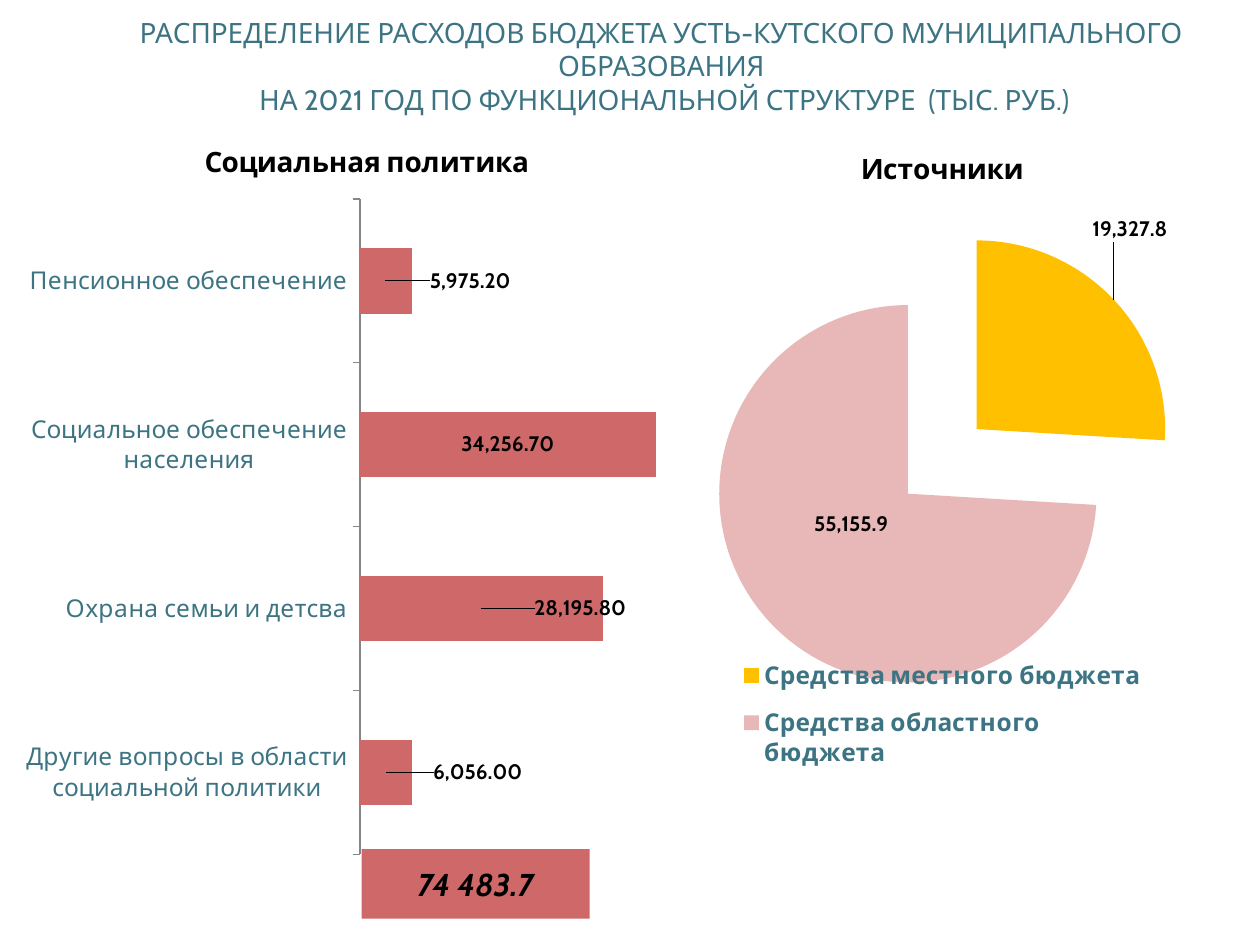
from lxml import etree
from pptx import Presentation
from pptx import util as u
from pptx.chart import data as cd
from pptx.dml.color import RGBColor
from pptx.enum import chart as ch, shapes, text
from pptx.oxml.ns import qn

FONT = "Cabin"
HUES = {"teal": "3C7483", "red": "CF6868", "gold": "FFC000",
        "pink": "E8B7B7", "ink": "000000", "axis": "868686"}


def rgb(name):
    return RGBColor.from_string(HUES[name])


def layout(x, y, w=None, h=None, inner=False):
    """Manual layout: a place when w and h are given, else a shift."""
    root = etree.Element(qn("c:layout"))
    man = etree.SubElement(root, qn("c:manualLayout"))
    items = [("x", x), ("y", y)]
    if w:
        edges = [("xMode", "edge"), ("yMode", "edge")]
        items = edges + items + [("w", w), ("h", h)]
    if inner:
        items.insert(0, ("layoutTarget", "inner"))
    for tag, val in items:
        etree.SubElement(man, qn("c:" + tag)).set("val", str(val))
    return root


class Deck:
    def __init__(self, wide, high):
        self.prs = Presentation()
        self.prs.slide_width, self.prs.slide_height = u.Cm(wide), u.Cm(high)
        self.slide = self.prs.slides.add_slide(self.prs.slide_layouts[6])

    def style(self, font, size, hue="ink", bold=False, slant=False):
        font.name, font.size = FONT, u.Pt(size)
        font.bold, font.italic = bold, slant
        font.color.rgb = rgb(hue)

    def fill_text(self, shape, words, size, hue, **kw):
        frame = shape.text_frame
        frame.word_wrap = True
        frame.vertical_anchor = text.MSO_ANCHOR.MIDDLE
        frame.text = words
        for par in frame.paragraphs:
            par.alignment = text.PP_ALIGN.CENTER
            for run in par.runs:
                self.style(run.font, size, hue, **kw)

    def label(self, box, words, size, hue):
        shape = self.slide.shapes.add_textbox(*map(u.Cm, box))
        self.fill_text(shape, words, size, hue)

    def block(self, box, words, size, fill):
        shape = self.slide.shapes.add_shape(
            shapes.MSO_SHAPE.RECTANGLE, *map(u.Cm, box))
        shape.shadow.inherit = False
        shape.fill.solid()
        shape.fill.fore_color.rgb = rgb(fill)
        shape.line.fill.background()
        self.fill_text(shape, words, size, "ink", bold=True, slant=True)

    def chart(self, kind, box, title, rows, hues, plot, fmt, shifts):
        data = cd.CategoryChartData()
        data.categories = [name for name, _ in rows]
        data.add_series(title, [val for _, val in rows])
        chart = self.slide.shapes.add_chart(
            kind, *map(u.Cm, box), data).chart
        self.style(chart.font, 18)
        chart.has_legend = False

        # Title and plot area
        chart.has_title = True
        frame = chart.chart_title.text_frame
        frame.text = title
        self.style(frame.paragraphs[0].runs[0].font, 16, bold=True)
        area = chart.plots[0]
        area.vary_by_categories = False
        node = chart.element.find(".//" + qn("c:plotArea"))
        for old in node.findall(qn("c:layout")):
            node.remove(old)
        node.insert(0, layout(*plot, inner=True))

        # Points and value labels
        series = area.series[0]
        for num, hue in enumerate(hues):
            fill = series.points[num].format.fill
            fill.solid()
            fill.fore_color.rgb = rgb(hue)
        tags = series.data_labels
        tags.show_value = True
        tags.number_format, tags.number_format_is_linked = fmt, False
        tags.position = ch.XL_LABEL_POSITION.CENTER
        self.style(tags.font, 12, bold=True)
        for num in shifts:
            tag = series.points[num].data_label
            self.style(tag.font, 12, bold=True)
            tag.position = ch.XL_LABEL_POSITION.CENTER
        for node in chart.element.findall(".//" + qn("c:dLbl")):
            idx = node.find(qn("c:idx"))
            form = etree.Element(qn("c:numFmt"))
            form.set("formatCode", fmt)
            form.set("sourceLinked", "0")
            idx.addnext(form)
            idx.addnext(layout(*shifts[int(idx.get("val"))]))
        return chart

    def bars(self, *args):
        chart = self.chart(ch.XL_CHART_TYPE.BAR_STACKED, *args)
        chart.plots[0].gap_width, chart.plots[0].overlap = 150, 100
        cats, vals = chart.category_axis, chart.value_axis
        cats.major_tick_mark = ch.XL_TICK_MARK.OUTSIDE
        cats.format.line.color.rgb = rgb("axis")
        self.style(cats.tick_labels.font, 14, "teal")
        vals.has_major_gridlines = vals.visible = False
        vals.minimum_scale, vals.maximum_scale = 0, 40000

    def pie(self, *args, burst, key):
        chart = self.chart(ch.XL_CHART_TYPE.PIE, *args)
        series = chart.element.find(".//" + qn("c:ser"))
        part = etree.Element(qn("c:explosion"))
        part.set("val", str(burst))
        series.find(qn("c:dPt")).addprevious(part)
        tags = series.find(qn("c:dLbls"))
        for old in tags.findall(qn("c:showLeaderLines")):
            tags.remove(old)
        etree.SubElement(tags, qn("c:showLeaderLines")).set("val", "1")

        # Legend over the foot of the pie
        chart.has_legend = True
        legend = chart.legend
        legend.position = ch.XL_LEGEND_POSITION.BOTTOM
        legend.include_in_layout = False
        self.style(legend.font, 14, "teal", bold=True)
        node = chart.element.find(".//" + qn("c:legend"))
        for old in node.findall(qn("c:layout")):
            node.remove(old)
        node.find(qn("c:legendPos")).addnext(layout(*key))


def main():
    deck = Deck(25.4, 19.05)

    # Heading
    deck.label((1.27, 0.13, 24.13, 2.39),
               "РАСПРЕДЕЛЕНИЕ РАСХОДОВ БЮДЖЕТА УСТЬ-КУТСКОГО "
               "МУНИЦИПАЛЬНОГО ОБРАЗОВАНИЯ\v НА 2021 ГОД ПО "
               "ФУНКЦИОНАЛЬНОЙ СТРУКТУРЕ  (ТЫС. РУБ.)", 16, "teal")

    # Spending by purpose
    costs = [("Другие вопросы в области социальной политики", 6056),
             ("Охрана семьи и детсва", 28195.8),
             ("Социальное обеспечение населения", 34256.7),
             ("Пенсионное обеспечение", 5975.2)]
    deck.bars((0.3, 2.34, 14.2, 15.19), "Социальная политика", costs,
              ["red"] * len(costs), (0.49, 0.11, 0.49, 0.87), "#,##0.00",
              {0: (0.13, 0), 1: (0.14, 0), 3: (0.12, 0)})

    # Sources of funds
    funds = [("Средства местного бюджета", 19327.8),
             ("Средства областного бюджета", 55155.9)]
    deck.pie((12.9, 2.51, 12.19, 13.59), "Источники", funds,
             ["gold", "pink"], (0.11, 0.15, 0.78, 0.7), "#,##0.0",
             {0: (0.14, -0.2), 1: (0.02, -0.05)},
             burst=25, key=(0.16, 0.77, 0.68, 0.21))

    # Total
    deck.block((7.29, 17.12, 4.6, 1.4), "74 483.7", 18, "red")
    deck.prs.save("out.pptx")


if __name__ == "__main__":
    main()
